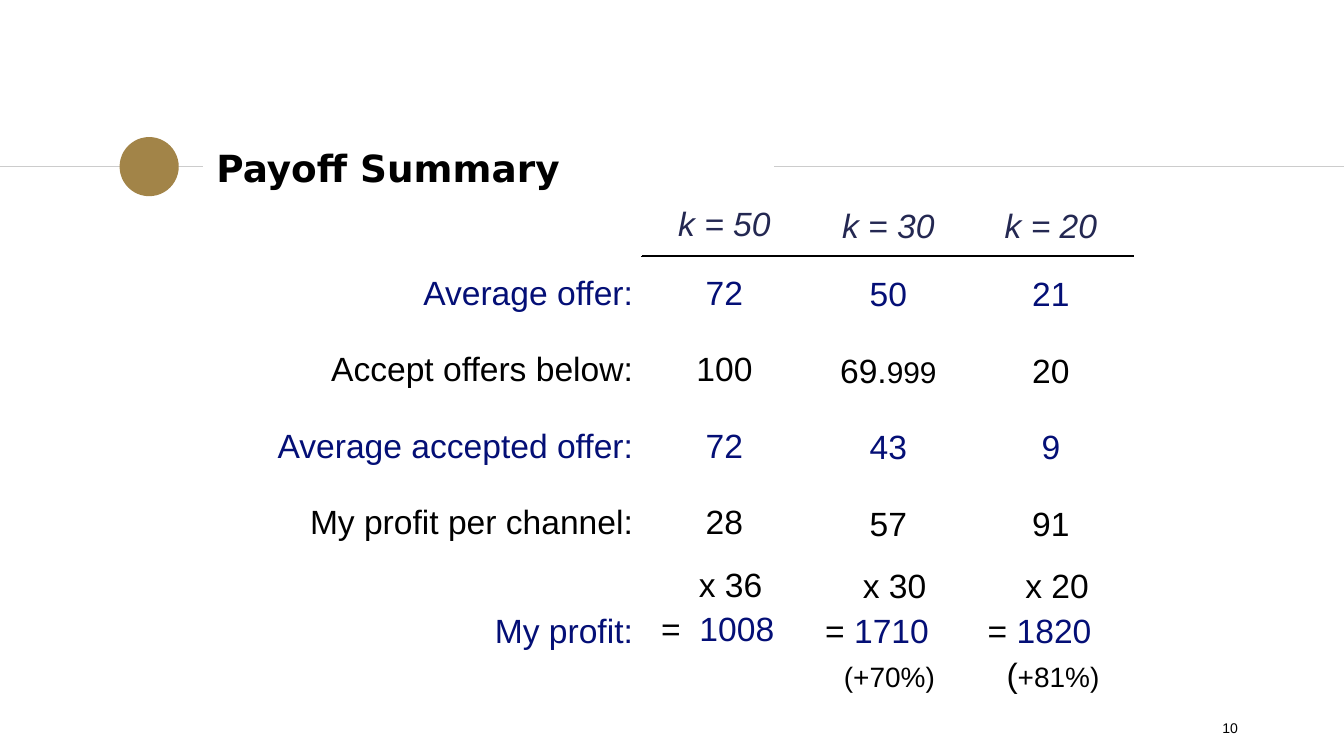
from dataclasses import dataclass

from lxml.etree import SubElement
from pptx import Presentation
from pptx.dml.color import RGBColor
from pptx.enum.shapes import MSO_CONNECTOR, MSO_SHAPE
from pptx.enum.text import MSO_ANCHOR, PP_ALIGN
from pptx.oxml import parse_xml
from pptx.oxml.ns import nsdecls, qn
from pptx.util import Inches, Pt


@dataclass(frozen=True)
class Theme:
    ink: str = "000000"
    navy: str = "040F76"
    slate: str = "242852"
    gold: str = "A28448"
    rule: str = "CCCCCC"
    body_font: str = "Arial"
    title_font: str = "DejaVu Sans"
    title: float = 20
    body: float = 18
    decimals: float = 16
    small: float = 15
    number: float = 7.5


NO_STYLE = "{2D5ABB26-0587-4C30-8999-92F81FD0307C}"
COLS = [2.88, 1.22, 1.22, 1.22]
ROWS = [0.45, 0.57, 0.57, 0.57, 0.57, 1.1]
LABELS = ["Average offer:", "Accept offers below:", "Average accepted offer:",
          "My profit per channel:", "My profit:"]


class PayoffSlide:
    def __init__(self, prs, theme):
        self.t = theme
        self.s = prs.slides.add_slide(prs.slide_layouts[5])

    def format_run(self, r, color, size, font=None, bold=False, italic=False):
        r.font.name = font or self.t.body_font
        r.font.size = Pt(size)
        r.font.bold = bold
        r.font.italic = italic
        r.font.color.rgb = RGBColor.from_string(color)

    def title(self, text, x, y, w, h):
        sp = self.s.shapes.title
        sp.left, sp.top, sp.width, sp.height = map(Inches, (x, y, w, h))
        tf = sp.text_frame
        tf.text = text
        tf.vertical_anchor = MSO_ANCHOR.MIDDLE
        tf.margin_left = tf.margin_right = tf.margin_top = tf.margin_bottom = Inches(0.1)
        p = tf.paragraphs[0]
        p.alignment = PP_ALIGN.LEFT
        self.format_run(p.runs[0], self.t.ink, self.t.title, self.t.title_font, bold=True)

    def line(self, x1, x2, y):
        cx = self.s.shapes.add_connector(
            MSO_CONNECTOR.STRAIGHT, Inches(x1), Inches(y), Inches(x2), Inches(y))
        cx.line.color.rgb = RGBColor.from_string(self.t.rule)
        cx.line.width = Pt(0.75)
        SubElement(cx._element.spPr, qn("a:effectLst"))

    def dot(self, x, y, d):
        sp = self.s.shapes.add_shape(
            MSO_SHAPE.OVAL, Inches(x), Inches(y), Inches(d), Inches(d))
        sp.shadow.inherit = False
        sp.fill.solid()
        sp.fill.fore_color.rgb = RGBColor.from_string(self.t.gold)
        sp.line.fill.background()

    def number(self, text, x, y, w, h):
        tf = self.s.shapes.add_textbox(Inches(x), Inches(y), Inches(w), Inches(h)).text_frame
        tf.word_wrap = True
        tf.vertical_anchor = MSO_ANCHOR.MIDDLE
        tf.text = text
        p = tf.paragraphs[0]
        p.alignment = PP_ALIGN.RIGHT
        self.format_run(p.runs[0], self.t.ink, self.t.number)

    def paragraph(self, p, runs, align=PP_ALIGN.LEFT, indent=0, italic=False):
        p.alignment = align
        p.space_before = Pt(0.2 * self.t.body)
        if indent:
            p._p.get_or_add_pPr().set("marL", str(Inches(indent)))
        for text, color, size in runs:
            r = p.add_run()
            r.text = text
            self.format_run(r, color, size, italic=italic)

    def underline(self, cell):
        cell._tc.get_or_add_tcPr().insert(0, parse_xml(
            f'<a:lnB {nsdecls("a")} w="{Pt(1)}"><a:solidFill>'
            f'<a:srgbClr val="{self.t.ink}"/></a:solidFill></a:lnB>'))

    def row_color(self, row):
        return self.t.navy if row % 2 else self.t.ink

    def table(self, x, y):
        frame = self.s.shapes.add_table(
            len(ROWS), len(COLS), Inches(x), Inches(y), Inches(sum(COLS)), Inches(sum(ROWS)))
        table = frame.table
        table.first_row = table.horz_banding = False
        table._tbl.tblPr.find(qn("a:tableStyleId")).text = NO_STYLE
        for col, w in zip(table.columns, COLS):
            col.width = Inches(w)
        for row, h in zip(table.rows, ROWS):
            row.height = Inches(h)
        for cell in table.iter_cells():
            cell.fill.background()
            cell.margin_left = cell.margin_right = Inches(0.07)
            cell.margin_top = cell.margin_bottom = Inches(0.04)
            cell.vertical_anchor = MSO_ANCHOR.MIDDLE
        for c in range(1, len(COLS)):
            self.underline(table.cell(0, c))
        return table

    def labels(self, table):
        for row, text in enumerate(LABELS, 1):
            p = table.cell(row, 0).text_frame.paragraphs[0]
            self.paragraph(p, [(text, self.row_color(row), self.t.body)], PP_ALIGN.RIGHT)

    def scenario(self, table, col, k, values, channels, profit, gain):
        t = self.t
        self.paragraph(table.cell(0, col).text_frame.paragraphs[0],
                       [(f"k = {k}", t.slate, t.body)], PP_ALIGN.CENTER, italic=True)
        for row, value in enumerate(values, 1):
            whole, point, decimals = value.partition(".")
            runs = [(whole + point, self.row_color(row), t.body)]
            if decimals:
                runs.append((decimals, self.row_color(row), t.decimals))
            self.paragraph(table.cell(row, col).text_frame.paragraphs[0],
                           runs, PP_ALIGN.CENTER)
        cell = table.cell(len(ROWS) - 1, col)
        cell.vertical_anchor = MSO_ANCHOR.TOP
        tf = cell.text_frame
        self.paragraph(tf.paragraphs[0], [(f"x {channels}", t.ink, t.body)], indent=0.35)
        p = tf.add_paragraph()
        self.paragraph(p, [("= ", t.ink, t.body), (profit, t.navy, t.body)], indent=0.07)
        if gain:
            p = tf.add_paragraph()
            self.paragraph(p, [(text, t.ink, size) for text, size in gain], indent=0.21)
            p.space_before = Pt(0.2 * t.body + t.body - gain[0][1])
        else:
            p.runs[0]._r.get_or_add_rPr().set("spc", "250")


def main():
    prs = Presentation()
    prs.slide_width, prs.slide_height = Inches(10), Pt(405)
    t = Theme()
    slide = PayoffSlide(prs, t)
    slide.line(0, 1.51, 1.24)
    slide.dot(0.89, 1.02, 0.44)
    slide.line(5.76, 10, 1.24)
    slide.title("Payoff Summary", 1.51, 1.01, 4.24, 0.48)

    scenarios = [
        (1.89, 1.46, 3, "20", ["21", "20", "9", "91"], "20", "1820",
         [("(", t.body), ("+81%)", t.small)]),
        (1.9, 1.45, 1, "50", ["72", "100", "72", "28"], "36", "1008", []),
        (1.9, 1.46, 2, "30", ["50", "69.999", "43", "57"], "30", "1710",
         [("(+70%)", t.small)]),
    ]
    for x, y, col, *figures in scenarios:
        table = slide.table(x, y)
        slide.scenario(table, col, *figures)
        if col == 1:
            table.rows[len(ROWS) - 1].height = Inches(1.05)
            slide.labels(table)

    slide.number("10", 7.06, 5.27, 2.25, 0.3)
    prs.save("out.pptx")


if __name__ == "__main__":
    main()
